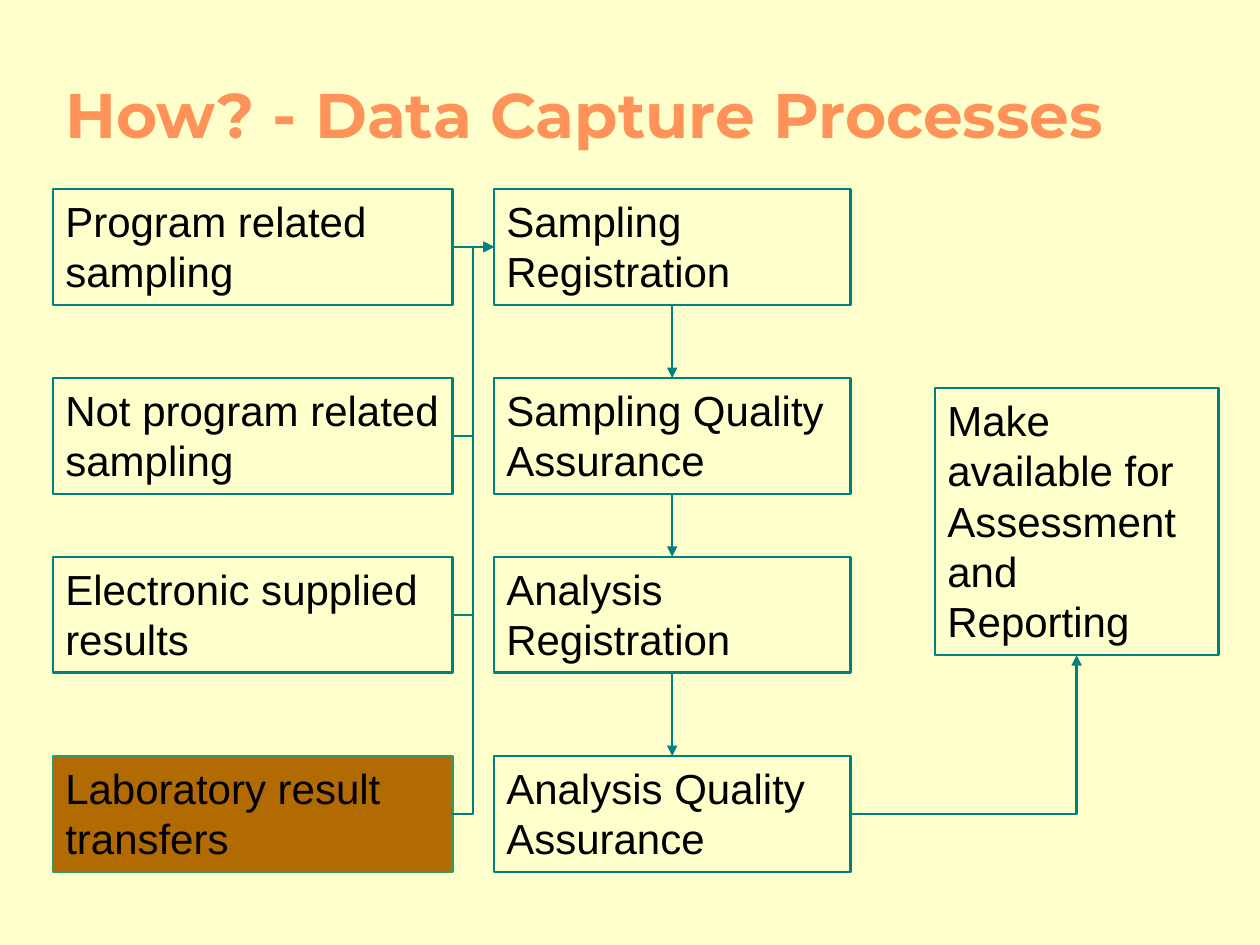
from pptx import Presentation
from pptx.dml.color import RGBColor
from pptx.enum import shapes, text
from pptx.oxml import ns, xmlchemy
from pptx.util import Inches, Pt

CREAM = RGBColor(0xFF, 0xFF, 0xCC)
ORANGE = RGBColor(0xFF, 0x92, 0x58)
TEAL = RGBColor(0x00, 0x80, 0x80)
GREEN = RGBColor(0x33, 0x99, 0x66)
BROWN = RGBColor(0xB2, 0x6B, 0x02)
BLACK = RGBColor(0, 0, 0)

TOP, LEFT, BOTTOM, RIGHT = range(4)
ROWS = (1.5, 3, 4.42, 6)
SOURCES = (
    "Program related sampling",
    "Not program related sampling",
    "Electronic supplied results",
    "Laboratory result transfers",
)
STEPS = (
    "Sampling Registration",
    "Sampling Quality Assurance",
    "Analysis Registration",
    "Analysis Quality Assurance",
)


def write(sp, words, size=24, font="Arial", color=BLACK, bold=False,
          anchor=text.MSO_ANCHOR.TOP):
    tf = sp.text_frame
    tf.word_wrap = True
    tf.auto_size = text.MSO_AUTO_SIZE.NONE
    tf.vertical_anchor = anchor
    p = tf.paragraphs[0]
    p.alignment = text.PP_ALIGN.LEFT
    r = p.add_run()
    r.text = words
    r.font.size = Pt(size)
    r.font.name = font
    r.font.bold = bold
    r.font.color.rgb = color


def add_title(slide, words):
    sp = slide.shapes.title
    sp.left, sp.top = Inches(0.42), Inches(0)
    sp.width, sp.height = Inches(8.92), Inches(1.25)
    write(sp, words, size=36, font="Montserrat", color=ORANGE, bold=True,
          anchor=text.MSO_ANCHOR.BOTTOM)


def add_box(slide, words, left, top, width, height=0.92, fill=None, line=TEAL):
    sp = slide.shapes.add_shape(
        shapes.MSO_SHAPE.RECTANGLE,
        Inches(left), Inches(top), Inches(width), Inches(height))
    sp.shadow.inherit = False
    if fill is None:
        sp.fill.background()
    else:
        sp.fill.solid()
        sp.fill.fore_color.rgb = fill
    sp.line.color.rgb = line
    sp.line.width = Pt(1.5)
    write(sp, words)
    sp.text_frame.paragraphs[0].space_before = Pt(12)
    return sp


def add_arrow(slide, start, start_site, end, end_site, preset="line"):
    kind = shapes.MSO_CONNECTOR.STRAIGHT
    if preset != "line":
        kind = shapes.MSO_CONNECTOR.ELBOW
    c = slide.shapes.add_connector(kind, 0, 0, 0, 0)
    c.begin_connect(start, start_site)
    c.end_connect(end, end_site)
    c.line.color.rgb = TEAL
    c.line.width = Pt(1.5)
    props = c._element.spPr
    props.find(ns.qn("a:prstGeom")).set("prst", preset)
    head = xmlchemy.OxmlElement("a:tailEnd")
    head.set("type", "triangle")
    props.find(ns.qn("a:ln")).append(head)
    props.append(xmlchemy.OxmlElement("a:effectLst"))


def main():
    prs = Presentation()
    prs.slide_width, prs.slide_height = Inches(10), Inches(7.5)
    slide = prs.slides.add_slide(prs.slide_layouts[5])
    slide.background.fill.solid()
    slide.background.fill.fore_color.rgb = CREAM
    add_title(slide, "How? - Data Capture Processes")

    sources = []
    for words, top in zip(SOURCES, ROWS):
        last = words == SOURCES[-1]
        sources.append(add_box(slide, words, 0.42, top, 3.17,
                               fill=BROWN if last else None,
                               line=GREEN if last else TEAL))
    steps = [add_box(slide, words, 3.92, top, 2.83)
             for words, top in zip(STEPS, ROWS)]
    report = add_box(slide, "Make available for Assessment and Reporting",
                     7.42, 3.08, 2.25, 2.12)

    for source in sources:
        preset = "line" if source is sources[0] else "bentConnector3"
        add_arrow(slide, source, RIGHT, steps[0], LEFT, preset)
    for upper, lower in zip(steps, steps[1:]):
        add_arrow(slide, upper, BOTTOM, lower, TOP)
    add_arrow(slide, steps[-1], RIGHT, report, BOTTOM, "bentConnector2")

    prs.save("out.pptx")


if __name__ == "__main__":
    main()
